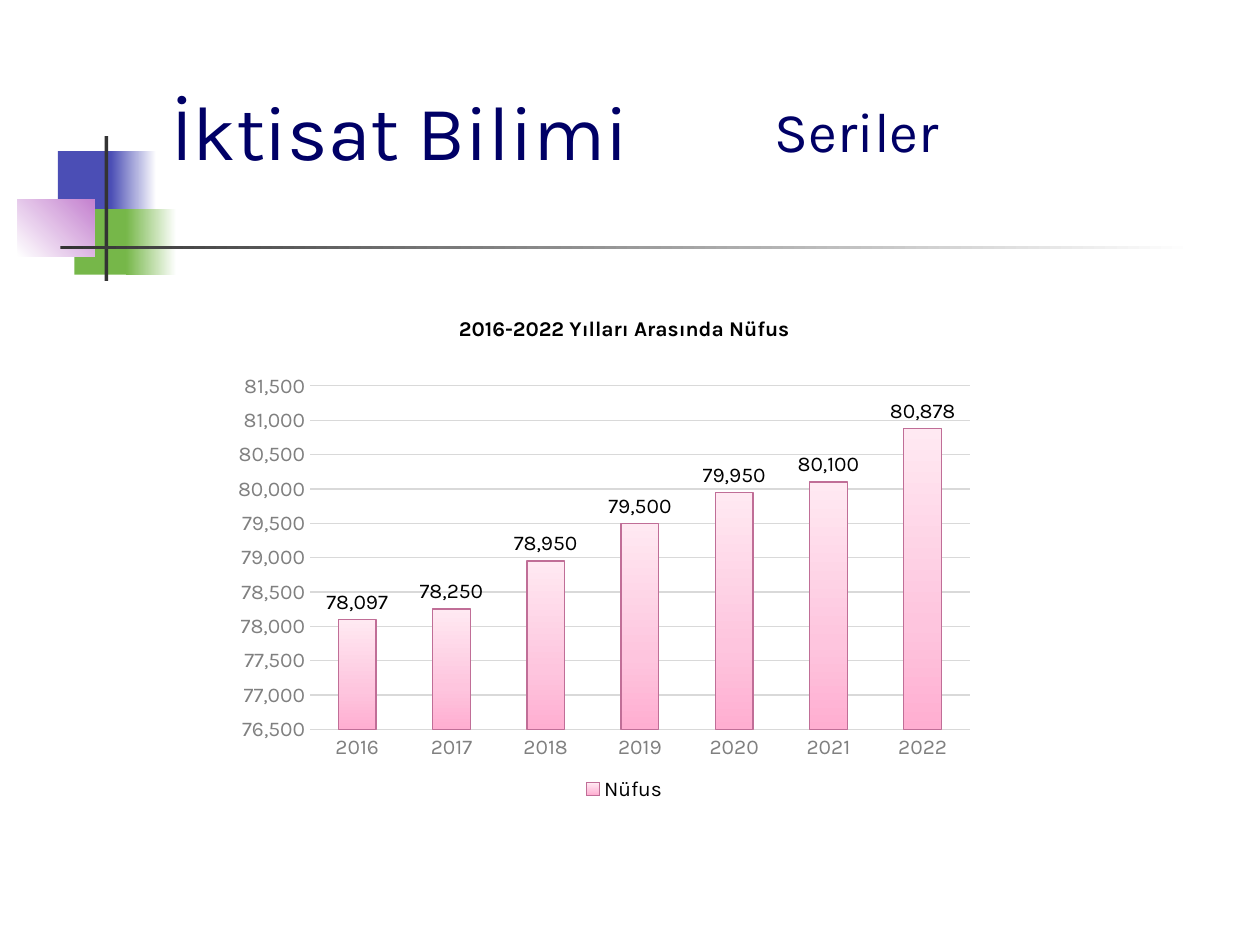
from pptx import Presentation
from pptx.chart.data import CategoryChartData
from pptx.dml.color import RGBColor
from pptx.enum.chart import XL_CHART_TYPE as ChartType, XL_LABEL_POSITION as LabelPos
from pptx.enum.chart import XL_LEGEND_POSITION as LegendPos, XL_TICK_MARK as Tick
from pptx.enum.shapes import MSO_SHAPE as Shape
from pptx.enum.text import MSO_ANCHOR as Anchor, PP_ALIGN as Align
from pptx.oxml import parse_xml
from pptx.oxml.ns import nsdecls
from pptx.util import Inches, Pt

FONT = "Karla"
COLORS = {
    "navy": "000066", "blue": "4B4EB5", "green": "76B749", "purple": "C481CF",
    "dark": "333333", "white": "FFFFFF", "black": "000000", "axis": "808080",
    "grid": "D9D9D9", "bar_low": "FFAED1", "bar_mid": "FEC5DE",
    "bar_high": "FFE9F2", "bar_line": "C06E97",
}
DECOR = [
    ((0.46, 1.2, 0.48, 0.52), ["blue"], 0),
    ((0.88, 1.2, 0.36, 0.52), ["blue", "white"], 0),
    ((0.59, 1.66, 0.46, 0.52), ["green"], 0),
    ((1, 1.66, 0.4, 0.52), ["green", "white"], 0),
    ((0.14, 1.58, 0.61, 0.46), ["white", "purple"], 315),
    ((0.83, 1.08, 0.03, 1.15), ["dark"], 0),
    ((0.48, 1.95, 9, 0.03), ["dark", "white"], 0),
]
TEXTS = [
    ((1.26, 0.23, 8.52, 1.6), "İktisat Bilimi", 44, Align.LEFT),
    ((4.89, 0.6, 3.82, 0.87), "Seriler", 32, Align.CENTER),
]
CHART_BOX = (0.8, 2.33, 8.31, 4.07)
CHART_TITLE = "2016-2022 Yılları Arasında Nüfus"
SERIES = "Nüfus"
POPULATION = {
    "2016": 78097, "2017": 78250, "2018": 78950, "2019": 79500,
    "2020": 79950, "2021": 80100, "2022": 80878,
}
PLOT = {"x": 0.2, "y": 0.18, "w": 0.63, "h": 0.67}


def rgb(name):
    return RGBColor.from_string(COLORS[name])


def inches(box):
    return [Inches(v) for v in box]


def set_font(font, size, color, bold=False):
    font.name, font.size, font.bold = FONT, Pt(size), bold
    font.color.rgb = rgb(color)


def set_line(line, color):
    line.color.rgb = rgb(color)
    line.width = Pt(0.75)


def fill_gradient(fill, sp_pr, stops, angle):
    fill.solid()
    fill.fore_color.rgb = rgb(stops[0][1])
    gs = "".join(
        f'<a:gs pos="{pos * 1000}"><a:srgbClr val="{COLORS[c]}"/></a:gs>' for pos, c in stops
    )
    grad = parse_xml(
        f'<a:gradFill {nsdecls("a")} rotWithShape="1"><a:gsLst>{gs}</a:gsLst>'
        f'<a:lin ang="{angle * 60000}" scaled="0"/></a:gradFill>'
    )
    solid = sp_pr.find(".//{*}solidFill")
    sp_pr.replace(solid, grad)


def add_decor(slide, box, colors, angle):
    sp = slide.shapes.add_shape(Shape.RECTANGLE, *inches(box))
    sp.shadow.inherit = False
    sp.line.fill.background()
    if len(colors) == 1:
        sp.fill.solid()
        sp.fill.fore_color.rgb = rgb(colors[0])
    else:
        fill_gradient(sp.fill, sp._element.spPr, list(zip((0, 100), colors)), angle)


def add_text(slide, box, text, size, align):
    tf = slide.shapes.add_textbox(*inches(box)).text_frame
    tf.word_wrap = True
    tf.vertical_anchor = Anchor.MIDDLE
    p = tf.paragraphs[0]
    p.text, p.alignment = text, align
    set_font(p.font, size, "navy")


def add_population_chart(slide):
    data = CategoryChartData(number_format="#,##0")
    data.categories = list(POPULATION)
    data.add_series(SERIES, list(POPULATION.values()))
    chart = slide.shapes.add_chart(ChartType.COLUMN_CLUSTERED, *inches(CHART_BOX), data).chart
    set_font(chart.font, 10, "black")

    chart.has_title = True
    p = chart.chart_title.text_frame.paragraphs[0]
    p.text = CHART_TITLE
    set_font(p.font, 12, "black", bold=True)
    chart.chart_title.include_in_layout = False

    chart.has_legend = True
    chart.legend.position = LegendPos.BOTTOM
    chart.legend.include_in_layout = False
    set_font(chart.legend.font, 12, "black")

    cat, val = chart.category_axis, chart.value_axis
    for axis in (cat, val):
        axis.major_tick_mark = axis.minor_tick_mark = Tick.NONE
        set_font(axis.tick_labels.font, 12, "axis")
    set_line(cat.format.line, "grid")
    val.format.line.fill.background()
    set_line(val.major_gridlines.format.line, "grid")
    val.minimum_scale, val.maximum_scale, val.major_unit = 76500, 81500, 500
    val.tick_labels.number_format = "#,##0"
    val.tick_labels.number_format_is_linked = False

    plot = chart.plots[0]
    plot.gap_width, plot.vary_by_categories = 150, False
    plot.has_data_labels = True
    labels = plot.data_labels
    labels.show_value, labels.position = True, LabelPos.OUTSIDE_END
    labels.number_format, labels.number_format_is_linked = "#,##0", False
    set_font(labels.font, 12, "black")

    ser = plot.series[0]
    stops = [(0, "bar_low"), (35, "bar_mid"), (100, "bar_high")]
    fill_gradient(ser.format.fill, ser._element.spPr, stops, 270)
    set_line(ser.format.line, "bar_line")

    area = chart._chartSpace.chart.plotArea
    for old in area.findall("{*}layout"):
        area.remove(old)
    modes = "".join(f'<c:{k}Mode val="edge"/>' for k in "xy")
    sizes = "".join(f'<c:{k} val="{v}"/>' for k, v in PLOT.items())
    area.insert(0, parse_xml(
        f'<c:layout {nsdecls("c")}><c:manualLayout><c:layoutTarget val="inner"/>'
        f'{modes}{sizes}</c:manualLayout></c:layout>'
    ))


def main():
    prs = Presentation()
    prs.slide_width, prs.slide_height = Inches(10), Inches(7.5)
    slide = prs.slides.add_slide(prs.slide_layouts[6])
    for item in DECOR:
        add_decor(slide, *item)
    for item in TEXTS:
        add_text(slide, *item)
    add_population_chart(slide)
    prs.save("out.pptx")


if __name__ == "__main__":
    main()
